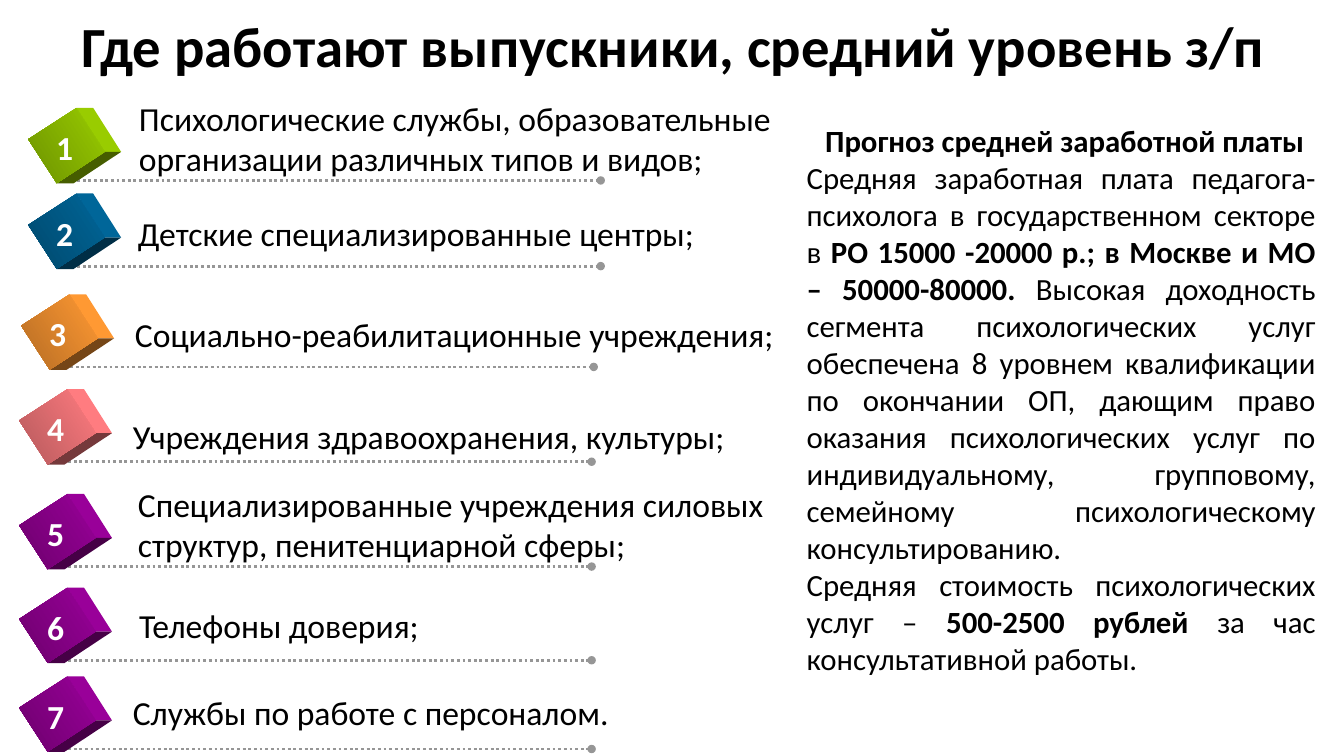
from dataclasses import dataclass

from lxml.etree import SubElement
from pptx import Presentation
from pptx.dml.color import RGBColor
from pptx.enum.dml import MSO_LINE
from pptx.enum.shapes import MSO_CONNECTOR, MSO_SHAPE
from pptx.enum.text import MSO_ANCHOR, MSO_AUTO_SIZE, PP_ALIGN
from pptx.oxml.ns import qn
from pptx.util import Pt

BLACK = RGBColor(0x00, 0x00, 0x00)
WHITE = RGBColor(0xFF, 0xFF, 0xFF)
GREY = RGBColor(0x96, 0x96, 0x96)


@dataclass
class CubeColors:
    light: RGBColor
    dark: RGBColor
    shade: RGBColor


GREEN = CubeColors(RGBColor(0x99, 0xCC, 0x00), RGBColor(0x6D, 0x92, 0x00), RGBColor(0x46, 0x5D, 0x00))
BLUE = CubeColors(RGBColor(0x00, 0x66, 0x99), RGBColor(0x00, 0x49, 0x6D), RGBColor(0x00, 0x2E, 0x46))
ORANGE = CubeColors(RGBColor(0xFF, 0x99, 0x33), RGBColor(0xB6, 0x6D, 0x24), RGBColor(0x75, 0x46, 0x17))
PINK = CubeColors(RGBColor(0xFF, 0x7C, 0x80), RGBColor(0xB6, 0x59, 0x5C), RGBColor(0x75, 0x39, 0x3B))
PURPLE = CubeColors(RGBColor(0x99, 0x00, 0x99), RGBColor(0x6D, 0x00, 0x6D), RGBColor(0x46, 0x00, 0x46))

# Cube left and top, text left, top and width, number of lines, colours, wording
WORKPLACES = [
    (28.8, 83.5, 92.2, 66.2, 488, 2, GREEN,
     "Психологические службы, образовательные организации различных типов и видов;"),
    (28.8, 144.7, 91.4, 148.3, 421, 1, BLUE, "Детские специализированные центры;"),
    (23.8, 216.7, 89.3, 221, 478, 1, ORANGE, "Социально-реабилитационные учреждения;"),
    (22.3, 284.4, 87.8, 293.8, 446, 1, PINK, "Учреждения здравоохранения, культуры;"),
    (22.3, 359.3, 91.4, 342, 519, 2, PURPLE,
     "Специализированные учреждения силовых структур, пенитенциарной сферы;"),
    (22.3, 426.2, 92.2, 428.4, 519, 1, PURPLE, "Телефоны доверия;"),
    (22.3, 489.6, 87.8, 491, 519, 1, PURPLE, "Службы по работе с персоналом."),
]

# Each paragraph: alignment and runs of (text, bold)
SALARY_FORECAST = [
    (PP_ALIGN.CENTER, [(" Прогноз средней заработной платы", True)]),
    (PP_ALIGN.JUSTIFY, [
        ("Средняя заработная плата педагога-психолога в государственном секторе в ", False),
        ("РО 15000 -20000 р.; в Москве и МО – 50000-80000.", True),
        (" Высокая доходность сегмента психологических услуг обеспечена 8 уровнем "
         "квалификации по окончании ОП, дающим право оказания психологических услуг по "
         "индивидуальному, групповому, семейному психологическому консультированию. ", False),
    ]),
    (PP_ALIGN.JUSTIFY, [
        ("Средняя стоимость психологических услуг – ", False),
        ("500-2500 рублей", True),
        (" за час консультативной работы.", False),
    ]),
]


class SlideBuilder:
    font_name = "Calibri"
    cube_width, cube_height, cube_rotation = 37.4, 41, 57

    def __init__(self, slide):
        self.slide = slide
        self.shapes = slide.shapes

    def format_font(self, font, size, color=BLACK, bold=False):
        font.name = self.font_name
        font.size = Pt(size)
        font.bold = bold
        font.color.rgb = color

    def place(self, shape, left, top, width, height):
        shape.left, shape.top = Pt(left), Pt(top)
        shape.width, shape.height = Pt(width), Pt(height)

    def title(self, text, left, top, width, height):
        shape = self.shapes.title
        self.place(shape, left, top, width, height)
        frame = shape.text_frame
        frame.text = text
        frame.auto_size = MSO_AUTO_SIZE.NONE
        frame.vertical_anchor = MSO_ANCHOR.MIDDLE
        paragraph = frame.paragraphs[0]
        paragraph.alignment = PP_ALIGN.LEFT
        paragraph.line_spacing = 0.7
        self.format_font(paragraph.runs[0].font, 40.5, bold=True)

    def body(self, paragraphs, left, top, width, height):
        shape = self.slide.placeholders[1]
        self.place(shape, left, top, width, height)
        frame = shape.text_frame
        frame.auto_size = MSO_AUTO_SIZE.NONE
        for index, (alignment, runs) in enumerate(paragraphs):
            paragraph = frame.add_paragraph() if index else frame.paragraphs[0]
            properties = paragraph._p.get_or_add_pPr()
            properties.set("marL", "0")
            properties.set("indent", "0")
            SubElement(properties, qn("a:buNone"))
            paragraph.alignment = alignment
            paragraph.space_before = Pt(0)
            for text, bold in runs:
                run = paragraph.add_run()
                run.text = text
                self.format_font(run.font, 22, bold=bold)

    def text(self, text, left, top, width, height, color=BLACK, bold=False):
        frame = self.shapes.add_textbox(Pt(left), Pt(top), Pt(width), Pt(height)).text_frame
        frame.word_wrap = True
        frame.text = text
        self.format_font(frame.paragraphs[0].runs[0].font, 24, color, bold)

    def dotted_line(self, left, top, length):
        """Draw a horizontal dotted line that ends in a round dot."""
        connector = self.shapes.add_connector(
            MSO_CONNECTOR.STRAIGHT, Pt(left), Pt(top), Pt(left + length), Pt(top))
        line = connector.line
        line.color.rgb = GREY
        line.width = Pt(2)
        line.dash_style = MSO_LINE.ROUND_DOT
        SubElement(line._get_or_add_ln(), qn("a:tailEnd"), type="oval")
        SubElement(connector._element.spPr, qn("a:effectLst"))

    def face(self, points, color):
        (start_x, start_y), *others = [(Pt(x), Pt(y)) for x, y in points]
        builder = self.shapes.build_freeform(start_x, start_y)
        builder.add_line_segments(others)
        shape = builder.convert_to_shape()
        shape.shadow.inherit = False
        shape.fill.solid()
        shape.fill.fore_color.rgb = color
        shape.line.fill.background()

    def cube(self, left, top, colors):
        """Draw a tilted front face with two faces running off to the right."""
        center_x, center_y = left + self.cube_width / 2, top + self.cube_height / 2
        upper = (center_x + 7, center_y - 27)
        right = (center_x + 27, center_y + 4.5)
        lower = (center_x - 7, center_y + 27)
        for start, end, color in ((upper, right, colors.light), (right, lower, colors.shade)):
            back = [(x + 12, y) for x, y in (end, start)]
            self.face([start, end, *back], color)
        front = self.shapes.add_shape(
            MSO_SHAPE.RECTANGLE, Pt(left), Pt(top), Pt(self.cube_width), Pt(self.cube_height))
        front.rotation = self.cube_rotation
        front.shadow.inherit = False
        front.line.fill.background()
        front.fill.gradient()
        front.fill.gradient_angle = 270
        for stop, color in zip(front.fill.gradient_stops, (colors.light, colors.dark)):
            stop.color.rgb = color


def main():
    presentation = Presentation()
    presentation.slide_width, presentation.slide_height = Pt(960), Pt(540)
    builder = SlideBuilder(presentation.slides.add_slide(presentation.slide_layouts[1]))

    builder.title("Где работают выпускники, средний уровень з/п", 51, -1.5, 886, 78.5)
    for number, workplace in enumerate(WORKPLACES, 1):
        left, top, text_left, text_top, text_width, line_count, colors, text = workplace
        builder.dotted_line(left + 22.3, top + 45.4, 378)
        builder.cube(left, top, colors)
        builder.text(text, text_left, text_top, text_width, 7.5 + 29 * line_count)
        builder.text(str(number), left + 4.3, top + 3.6, 28, 36.5, WHITE, bold=True)
    builder.body(SALARY_FORECAST, 569, 83.5, 378, 407)

    presentation.save("out.pptx")


if __name__ == "__main__":
    main()
